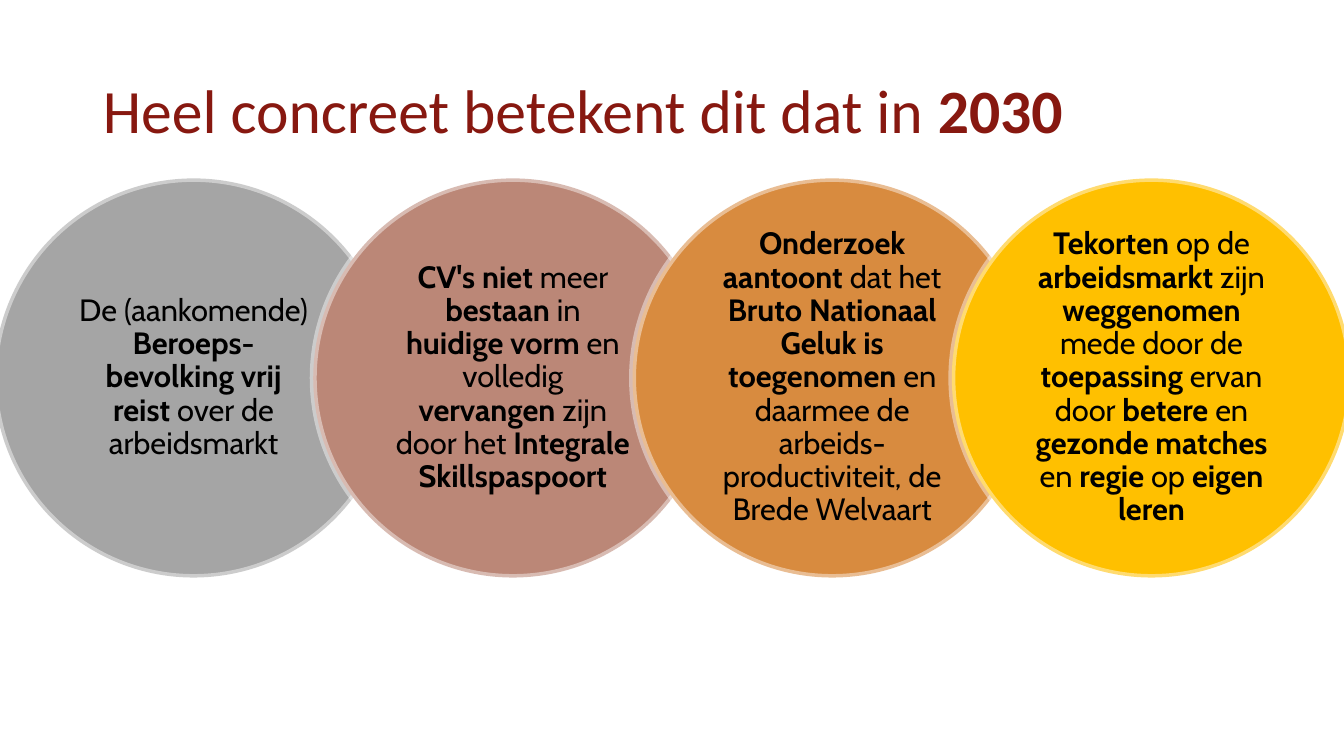
import pptx
import pptx.util
import pptx.dml.color
import pptx.enum.shapes
import pptx.enum.text
import pptx.oxml
import pptx.oxml.ns

Inches = pptx.util.Inches
THEME = {
    "title": {"name": "Calibri", "size": 44, "color": "871810"},
    "body": {"name": "Cabin", "size": 22, "color": "000000"},
    "outline": "FFFFFF",
    "circles": ["A5A5A5", "BB8777", "D88B3F", "FFC000"],
}
# Double asterisks switch bold on and off
GOALS = [
    "De (aankomende) **Beroeps-bevolking vrij reist **over de arbeidsmarkt",
    "**CV's niet** meer **bestaan** in **huidige vorm **en volledig "
    "**vervangen** zijn door het **Integrale Skillspaspoort**",
    "**Onderzoek aantoont** dat het **Bruto Nationaal Geluk is toegenomen** "
    "en daarmee de arbeids- productiviteit, de Brede Welvaart",
    "**Tekorten** op de **arbeidsmarkt** zijn **weggenomen** mede door de "
    "**toepassing** ervan door **betere** en **gezonde matches** en "
    "**regie** op **eigen leren**",
]
LEFT, TOP, SIZE, STEP = -0.06, 1.77, 3.96, 3.167
INSET, TEXT_SIZE = 0.58, 2.8


def rgb(value):
    return pptx.dml.color.RGBColor.from_string(value)


def add_runs(p, text, style):
    for i, part in enumerate(text.split("**")):
        if not part:
            continue
        r = p.add_run()
        r.text = part
        formats = {"name": style["name"], "size": pptx.util.Pt(style["size"]),
                   "bold": i % 2 == 1}
        for key, value in formats.items():
            setattr(r.font, key, value)
        r.font.color.rgb = rgb(style["color"])


prs = pptx.Presentation()
prs.slide_width, prs.slide_height = Inches(13.33), Inches(7.5)
s = prs.slides.add_slide(prs.slide_layouts[5])

# Title
title = s.shapes.title
title.left, title.top = Inches(0.92), Inches(0.4)
title.width, title.height = Inches(10.83), Inches(1.45)
tf = title.text_frame
tf.word_wrap = True
tf.auto_size = pptx.enum.text.MSO_AUTO_SIZE.NONE
tf.vertical_anchor = pptx.enum.text.MSO_ANCHOR.MIDDLE
p = tf.paragraphs[0]
p.alignment = pptx.enum.text.PP_ALIGN.LEFT
p.line_spacing = 0.9
add_runs(p, "Heel concreet betekent dit dat in **2030**", THEME["title"])

# Overlapping circles, each with its goal
for i, (goal, color) in enumerate(zip(GOALS, THEME["circles"])):
    x = LEFT + i * STEP
    sp = s.shapes.add_shape(pptx.enum.shapes.MSO_SHAPE.OVAL, Inches(x),
                            Inches(TOP), Inches(SIZE), Inches(SIZE))
    sp.shadow.inherit = False
    sp.fill.solid()
    sp.fill.fore_color.rgb = rgb(color)
    sp.line.color.rgb = rgb(THEME["outline"])
    sp.line.width = pptx.util.Pt(5)

    # Semi-transparent outline
    clr = sp.line._ln.find(".//" + pptx.oxml.ns.qn("a:srgbClr"))
    clr.append(pptx.oxml.parse_xml(
        f'<a:alpha {pptx.oxml.ns.nsdecls("a")} val="43000"/>'))

    tb = s.shapes.add_textbox(Inches(x + INSET), Inches(TOP + INSET),
                              Inches(TEXT_SIZE), Inches(TEXT_SIZE))
    tf = tb.text_frame
    frame = {"word_wrap": True,
             "vertical_anchor": pptx.enum.text.MSO_ANCHOR.MIDDLE,
             "margin_left": Inches(0.22), "margin_right": Inches(0.22),
             "margin_top": Inches(0.03), "margin_bottom": Inches(0.03)}
    for key, value in frame.items():
        setattr(tf, key, value)
    p = tf.paragraphs[0]
    p.alignment = pptx.enum.text.PP_ALIGN.CENTER
    p.line_spacing = 0.9
    add_runs(p, goal, THEME["body"])

prs.save("out.pptx")
